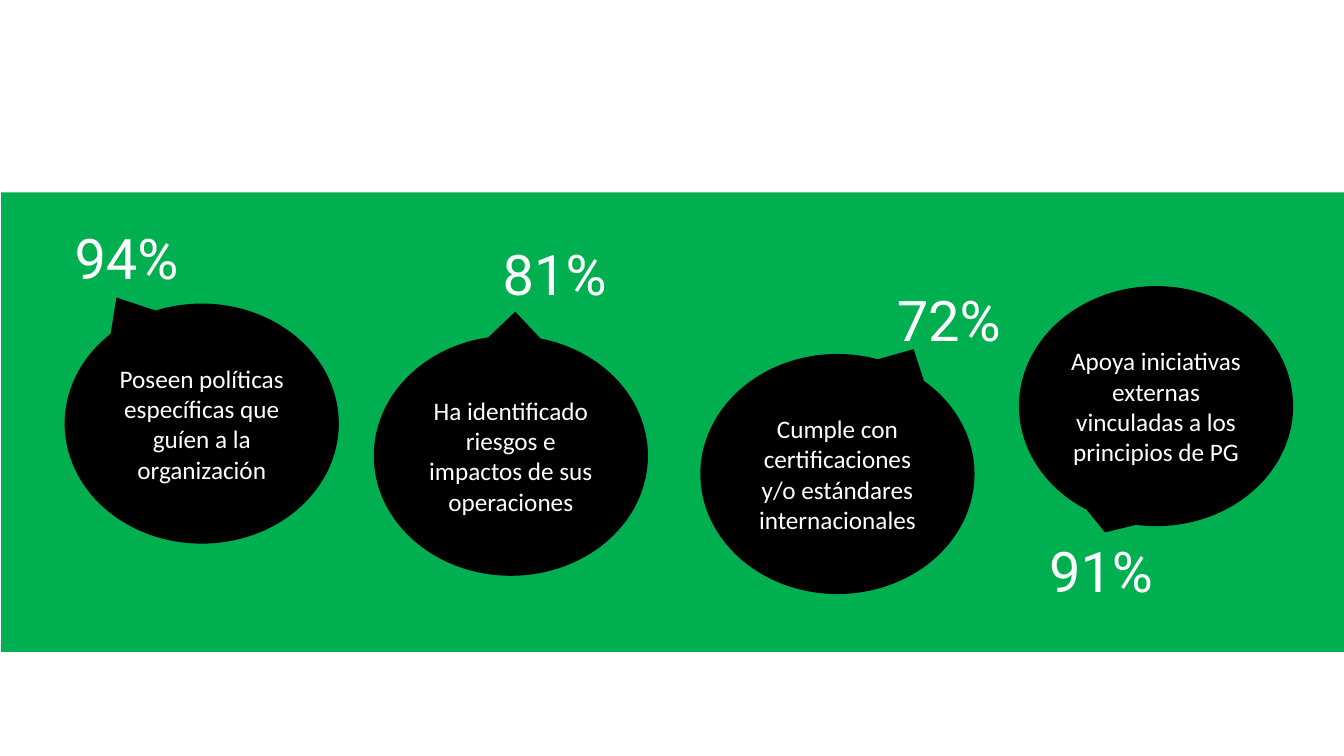
from pptx import Presentation
from pptx import util as u
from pptx.dml import color
from pptx.enum import shapes, text

COLOURS = {"band": "00B050", "bubble": "000000", "text": "FFFFFF"}
BUBBLE_SIZE = (6.91, 6.05)
LABEL_HEIGHT = 1.96
BUBBLE_FONT = {"name": "Calibri", "size": u.Pt(18)}
LABEL_FONT = {"name": "Roboto", "size": u.Pt(40)}

BUBBLES = [
    ("Poseen políticas específicas que guíen a la organización", (1.63, 7.65), (-0.311, -0.525)),
    ("Ha identificado riesgos e impactos de sus operaciones", (9.42, 8.46), (0.016, -0.6)),
    ("Cumple con certificaciones y/o estándares internacionales", (17.65, 8.92), (0.278, -0.52)),
    ("Apoya iniciativas externas vinculadas a los principios de PG", (25.68, 7.21), (-0.186, 0.526)),
]
LABELS = [
    ("94%", (1.63, 5.51), 3.35),
    ("81%", (12.42, 5.92), 3.2),
    ("72%", (22.35, 7.06), 3.2),
    ("91%", (26.19, 13.39), 3.15),
]


def rgb(name):
    return color.RGBColor.from_string(COLOURS[name])


def write(box, words, font, align):
    box.text_frame.word_wrap = True
    para = box.text_frame.paragraphs[0]
    para.alignment = align
    span = para.add_run()
    span.text = words
    for key, value in font.items():
        setattr(span.font, key, value)
    span.font.color.rgb = rgb("text")


def add_filled(page, kind, place, size, fill):
    shape = page.shapes.add_shape(kind, *map(u.Cm, place + size))
    shape.shadow.inherit = False
    shape.fill.solid()
    shape.fill.fore_color.rgb = rgb(fill)
    shape.line.fill.background()
    return shape


def add_bubble(page, words, place, tip):
    bubble = add_filled(page, shapes.MSO_SHAPE.OVAL_CALLOUT, place, BUBBLE_SIZE, "bubble")
    for index, offset in enumerate(tip):
        bubble.adjustments[index] = offset
    bubble.text_frame.vertical_anchor = text.MSO_ANCHOR.MIDDLE
    write(bubble, words, BUBBLE_FONT, text.PP_ALIGN.CENTER)


def add_label(page, words, place, width):
    label = page.shapes.add_textbox(*map(u.Cm, place + (width, LABEL_HEIGHT)))
    write(label, words, LABEL_FONT, text.PP_ALIGN.LEFT)
    label.text_frame.auto_size = text.MSO_AUTO_SIZE.SHAPE_TO_FIT_TEXT


def main():
    deck = Presentation()
    deck.slide_width, deck.slide_height = u.Cm(33.87), u.Cm(19.05)
    page = deck.slides.add_slide(deck.slide_layouts[6])
    add_filled(page, shapes.MSO_SHAPE.RECTANGLE, (0.03, 4.85), (33.86, 11.58), "band")
    for bubble in BUBBLES:
        add_bubble(page, *bubble)
    for label in LABELS:
        add_label(page, *label)
    deck.save("out.pptx")


if __name__ == "__main__":
    main()
